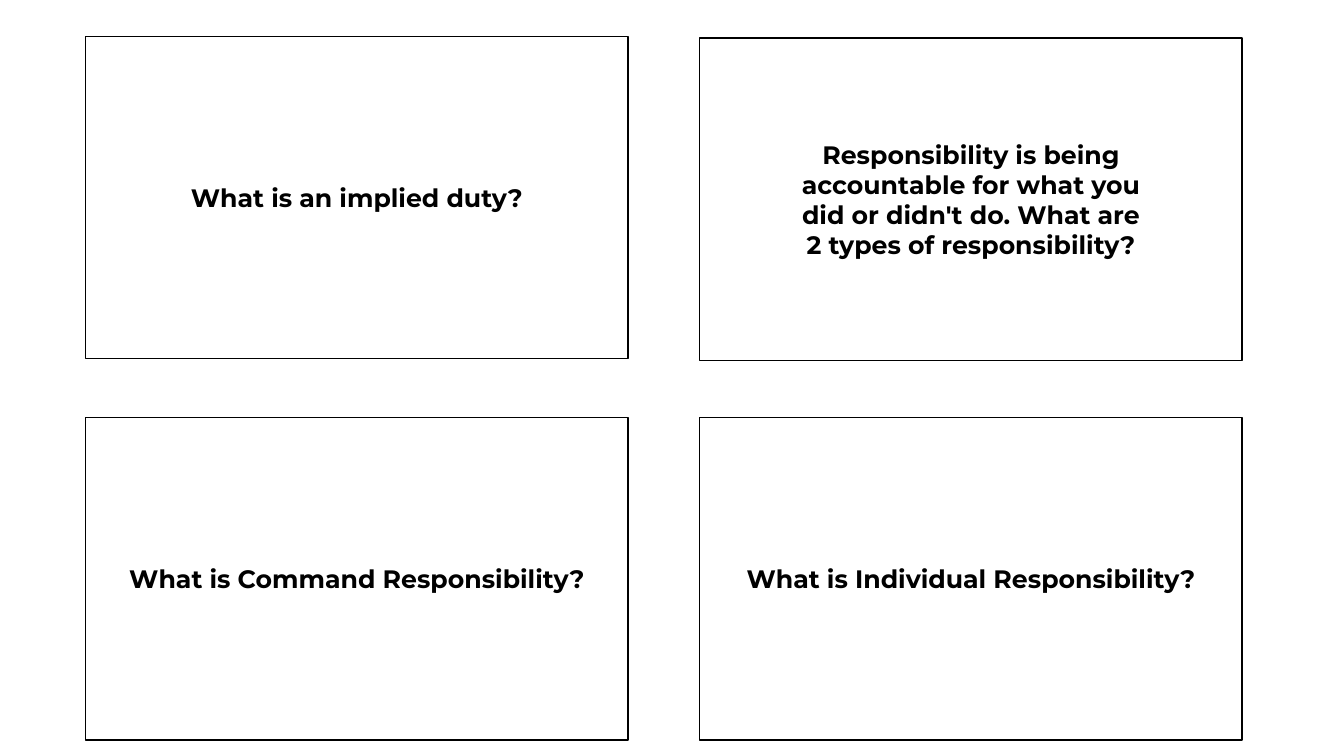
from pptx import Presentation
from pptx.dml.color import RGBColor
from pptx.enum.shapes import MSO_SHAPE
from pptx.enum.text import MSO_ANCHOR, PP_ALIGN
from pptx.util import Inches, Pt

COLORS = {"paper": "FFFFFF", "ink": "000000"}
LEFT, TOP = 0.85, 0.36
CARD_W, CARD_H = 5.38, 3.2
COL_STEP, ROW_STEP = 6.09, 3.78

CARDS = [
    (0, 1, ["What is Command Responsibility?"]),
    (0, 0, ["What is an implied duty?"]),
    (1, 0.005, ["Responsibility is being", "accountable for what you",
                "did or didn't do. What are", "2 types of responsibility?"]),
    (1, 1, ["What is Individual Responsibility?"]),
]


class CardSlide:
    """Draws question cards on a column and row grid in one style."""

    def __init__(self, prs, font="Montserrat", size=18):
        self.s = prs.slides.add_slide(prs.slide_layouts[6])
        self.font, self.size = font, size
        self.fill(self.s.background.fill, "paper")

    def fill(self, fill, name):
        fill.solid()
        fill.fore_color.rgb = RGBColor.from_string(COLORS[name])

    def card(self, col, row, lines):
        sp = self.s.shapes.add_shape(
            MSO_SHAPE.RECTANGLE,
            Inches(LEFT + col * COL_STEP), Inches(TOP + row * ROW_STEP),
            Inches(CARD_W), Inches(CARD_H))
        sp.shadow.inherit = False
        self.fill(sp.fill, "paper")
        self.fill(sp.line.fill, "ink")
        sp.line.width = Pt(1)
        tf = sp.text_frame
        tf.word_wrap = True
        tf.vertical_anchor = MSO_ANCHOR.MIDDLE
        for i, line in enumerate(lines):
            p = tf.add_paragraph() if i else tf.paragraphs[0]
            p.alignment = PP_ALIGN.CENTER
            self.run(p, line)

    def run(self, p, text):
        r = p.add_run()
        r.text = text
        r.font.name, r.font.size, r.font.bold = self.font, Pt(self.size), True
        self.fill(r.font.fill, "ink")


def main():
    prs = Presentation()
    prs.slide_width, prs.slide_height = Inches(13.33), Inches(7.5)
    slide = CardSlide(prs)
    for col, row, lines in CARDS:
        slide.card(col, row, lines)
    prs.save("out.pptx")


if __name__ == "__main__":
    main()
